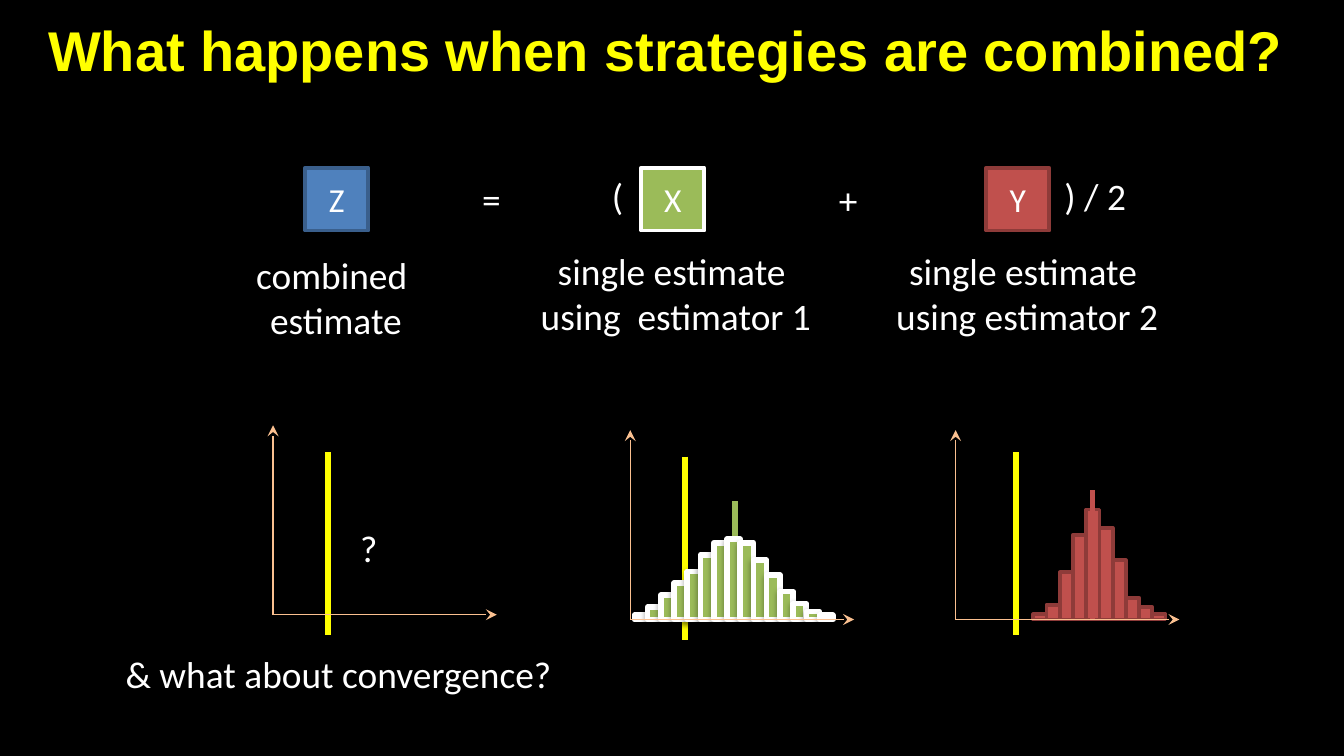
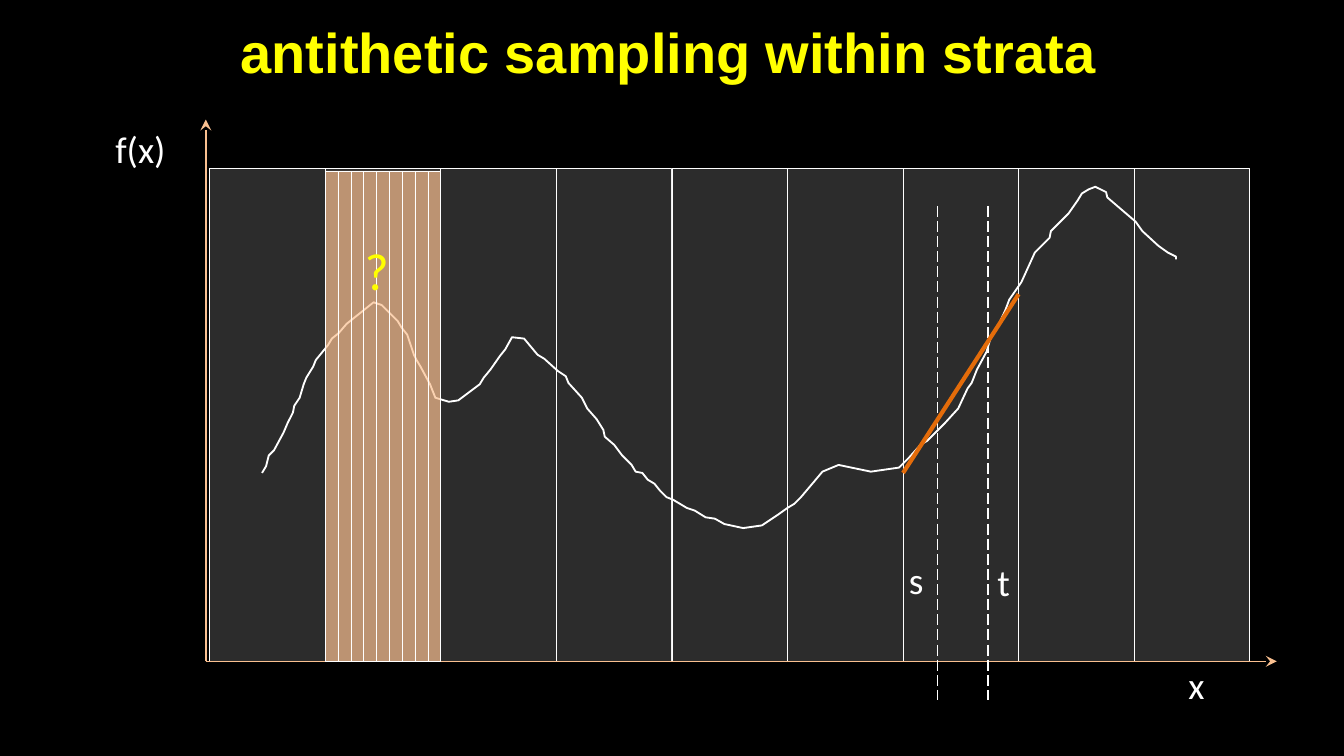
import pptx
import pptx.util
import pptx.dml.color
import pptx.enum.dml
import pptx.enum.shapes
import pptx.enum.text
import pptx.oxml.ns
from lxml import etree

Cm, Pt = pptx.util.Cm, pptx.util.Pt
qn = pptx.oxml.ns.qn

# Shared look
BLACK, WHITE, YELLOW = "000000", "FFFFFF", "FFFF00"
BLUE, GREEN, RED = "4F81BD", "9BBB59", "C0504D"
NAVY, WINE = "3A5F8C", "8E3B39"
PEACH, ORANGE, GRAY = "FAC090", "E46C0A", "404040"

# Slide 1: lengths in cm
HEAD_1 = ("What happens when strategies are combined?", 0.56, 0.2, 24.05)
TERMS = [("Z", 5.77, BLUE, NAVY), ("X", 12.12, GREEN, WHITE), ("Y", 18.64, RED, WINE)]
TERM_TOP, TERM_SIDE = 3.17, 1.19
NOTES_1 = [  # text, left, top, width, height
    ("=", 8.86, 3.2, 0.86, 1.12),
    ("+", 15.6, 3.23, 0.86, 1.12),
    ("combined \nestimate", 4.57, 4.65, 3.56, 1.96),
    ("single estimate \nusing  estimator 1", 9.93, 4.57, 5.69, 1.96),
    ("single estimate \nusing estimator 2", 16.66, 4.57, 5.51, 1.96),
    ("(", 11.3, 3.15, 0.74, 1.12),
    (") / 2", 19.86, 3.15, 1.68, 1.12),
    ("?", 6.55, 9.8, 0.84, 1.12),
    ("& what about convergence?", 2.08, 12.19, 8.64, 1.12),
]
PLOTS = [
    dict(left=5.16, base=11.62, truth=6.2, foot=12.01, bars=[]),
    dict(left=11.91, base=11.71, truth=12.95, foot=12.09, start=11.99,
         fill=GREEN, edge=WHITE, wide=3, shade=True, mean=(13.89, 9.47), front=False,
         bars=[0.08, 0.23, 0.46, 0.69, 0.91, 1.22, 1.45, 1.52, 1.45,
               1.12, 0.84, 0.53, 0.3, 0.15, 0.08]),
    dict(left=18.06, base=11.71, truth=19.2, foot=12.01, start=19.53,
         fill=RED, edge=WINE, wide=2, shade=False, mean=(20.65, 9.27), front=True,
         bars=[0.1, 0.28, 0.89, 1.6, 2.08, 1.73, 1.12, 0.41, 0.23, 0.1]),
]
RISE, RUN, TRUTH, BAR = 3.58, 4.23, 3.46, 0.25

# Slide 2: lengths in cm
HEAD_2 = ("antithetic sampling within strata", 1.04, 0.25, 23.19)
COUNT = 9
LEFT, TOP, WIDTH, BASE = 3.96, 3.18, 19.66, 12.5
NOTES_2 = [
    ("x", 21.84, 12.4, 1.55, 1.12),
    ("f(x)", 1.27, 2.26, 2.77, 2.29),
    ("s", 16.54, 10.41, 1.55, 2.29),
    ("t", 18.26, 10.44, 1.42, 2.29),
]
DASHES = [17.72, 18.67]
CURVE_UNIT = 0.0254  # cm for one step of the curve's grid
CURVE = [
    (195, 352), (198, 347), (200, 339), (204, 335), (211, 322), (214, 315),
    (218, 307), (219, 302), (223, 296), (226, 286), (228, 281), (233, 273),
    (235, 268), (244, 257), (247, 252), (252, 248), (258, 241), (268, 233),
    (278, 225), (284, 227), (296, 239), (299, 244), (303, 249), (308, 264),
    (310, 268), (313, 273), (320, 286), (324, 296), (334, 299), (341, 298),
    (357, 286), (360, 281), (365, 275), (372, 265), (376, 260), (381, 251),
    (390, 252), (400, 264), (405, 267), (415, 276), (421, 280), (423, 285),
    (433, 296), (437, 304), (444, 312), (449, 320), (450, 325), (457, 331),
    (463, 339), (470, 346), (473, 351), (478, 352), (482, 357), (487, 360),
    (491, 365), (496, 370), (501, 372), (511, 378), (517, 380), (525, 385),
    (532, 386), (539, 390), (553, 393), (567, 391), (579, 383), (586, 378),
    (591, 375), (596, 370), (607, 357), (612, 351), (624, 346), (648, 351),
    (669, 348), (676, 341), (685, 331), (690, 328), (703, 315), (713, 304),
    (720, 289), (723, 285), (727, 275), (734, 262), (737, 252), (742, 244),
    (748, 231), (751, 223), (760, 210), (770, 188), (781, 177), (782, 172),
    (795, 159), (802, 149), (805, 144), (810, 141), (815, 139), (823, 143),
    (824, 147), (845, 165), (850, 172), (862, 183), (869, 188), (875, 191),
    (875, 193),
]


def rgb(code):
    return pptx.dml.color.RGBColor.from_string(code)


def stroke(shape, color, width):
    shape.line.color.rgb = rgb(color)
    shape.line.width = Pt(width)


def write(frame, text, size, color, font="Calibri", bold=False):
    frame.text = text
    for para in frame.paragraphs:
        para.alignment = pptx.enum.text.PP_ALIGN.CENTER
        para.font.name, para.font.size, para.font.bold = font, Pt(size), bold
        para.font.color.rgb = rgb(color)


def page(deck, head):
    slide = deck.slides.add_slide(deck.slide_layouts[5])
    text, left, top, width = head
    title = slide.shapes.title
    title.left, title.top, title.width, title.height = map(Cm, (left, top, width, 1.45))
    write(title.text_frame, text, 30, YELLOW, "Arial", True)
    title.text_frame.vertical_anchor = pptx.enum.text.MSO_ANCHOR.MIDDLE
    return slide


def note(slide, text, left, top, width, height, size=20, color=WHITE):
    box = slide.shapes.add_textbox(Cm(left), Cm(top), Cm(width), Cm(height))
    box.text_frame.word_wrap = False
    write(box.text_frame, text, size, color)


def block(slide, left, top, width, height, fill, edge, wide, alpha=None):
    shape = slide.shapes.add_shape(pptx.enum.shapes.MSO_SHAPE.RECTANGLE,
                                   Cm(left), Cm(top), Cm(width), Cm(height))
    shape.shadow.inherit = False
    shape.fill.solid()
    shape.fill.fore_color.rgb = rgb(fill)
    if alpha:
        tint = shape.element.spPr.find(qn("a:solidFill")).find(qn("a:srgbClr"))
        etree.SubElement(tint, qn("a:alpha"), val=str(alpha * 1000))
    stroke(shape, edge, wide)
    return shape


def shade(shape):
    effect = shape.element.spPr.find(qn("a:effectLst"))
    drop = etree.SubElement(effect, qn("a:outerShdw"), blurRad=str(Pt(3.1)),
                            dist=str(Pt(1.6)), dir="5400000", rotWithShape="0")
    tint = etree.SubElement(drop, qn("a:srgbClr"), val=BLACK)
    etree.SubElement(tint, qn("a:alpha"), val="38000")


def rule(slide, x1, y1, x2, y2, color, width, arrow=False, dash=False):
    line = slide.shapes.add_connector(pptx.enum.shapes.MSO_CONNECTOR.STRAIGHT,
                                      Cm(x1), Cm(y1), Cm(x2), Cm(y2))
    stroke(line, color, width)
    if dash:
        line.line.dash_style = pptx.enum.dml.MSO_LINE.LONG_DASH
    props = line.element.spPr
    if arrow:
        etree.SubElement(props.find(qn("a:ln")), qn("a:tailEnd"), type="stealth")
    etree.SubElement(props, qn("a:effectLst"))


def axes(slide, left, base, rise, run):
    rule(slide, left, base, left, base - rise, PEACH, 0.75, arrow=True)
    rule(slide, left, base, left + run, base, PEACH, 0.75, arrow=True)


def plot(slide, data):
    base, bars = data["base"], data["bars"]
    rule(slide, data["truth"], data["foot"] - TRUTH, data["truth"], data["foot"], YELLOW, 3)

    def mean():
        x, top = data["mean"]
        rule(slide, x, top, x, base, data["fill"], 3)

    if bars and not data["front"]:
        mean()
    for i, tall in enumerate(bars):
        bar = block(slide, data["start"] + i * BAR, base - tall, BAR, tall,
                    data["fill"], data["edge"], data["wide"])
        if data["shade"]:
            shade(bar)
    if bars and data["front"]:
        mean()
    axes(slide, data["left"], base, RISE, RUN)


def combine(deck):
    slide = page(deck, HEAD_1)
    for data in PLOTS:
        plot(slide, data)
    for name, left, fill, edge in TERMS:
        term = block(slide, left, TERM_TOP, TERM_SIDE, TERM_SIDE, fill, edge, 2)
        write(term.text_frame, name, 18, WHITE)
        term.text_frame.vertical_anchor = pptx.enum.text.MSO_ANCHOR.MIDDLE
    for item in NOTES_1:
        note(slide, *item)


def strata(deck):
    slide = page(deck, HEAD_2)
    step = WIDTH / COUNT
    for i in range(COUNT):
        block(slide, LEFT + i * step, TOP, step, BASE - TOP, GRAY, WHITE, 0.25, 70)
    axes(slide, 3.89, BASE, 10.24, 20.24)

    # Function curve
    pen = slide.shapes.build_freeform(*CURVE[0], scale=Cm(CURVE_UNIT))
    pen.add_line_segments(CURVE[1:], close=False)
    curve = pen.convert_to_shape()
    curve.shadow.inherit = False
    curve.fill.background()
    stroke(curve, WHITE, 1)

    # Sample pair and its chord
    for item in NOTES_2:
        note(slide, *item)
    for x in DASHES:
        rule(slide, x, 3.89, x, 13.23, WHITE, 0.75, dash=True)
    rule(slide, LEFT + 6 * step, 8.94, LEFT + 7 * step, 5.56, ORANGE, 2.25)

    # Second stratum, split again
    thin, top = step / COUNT, TOP + 0.05
    for i in range(COUNT):
        block(slide, LEFT + step + i * thin, top, thin, BASE - top, PEACH, WHITE, 0.25, 70)
    note(slide, "?", 6.5, 4.37, 1.24, 1.45, 28, YELLOW)


def main():
    deck = pptx.Presentation()
    deck.slide_width, deck.slide_height = Cm(25.4), Cm(14.29)
    back = deck.slide_master.background.fill
    back.solid()
    back.fore_color.rgb = rgb(BLACK)
    combine(deck)
    strata(deck)
    deck.save("out.pptx")


if __name__ == "__main__":
    main()
